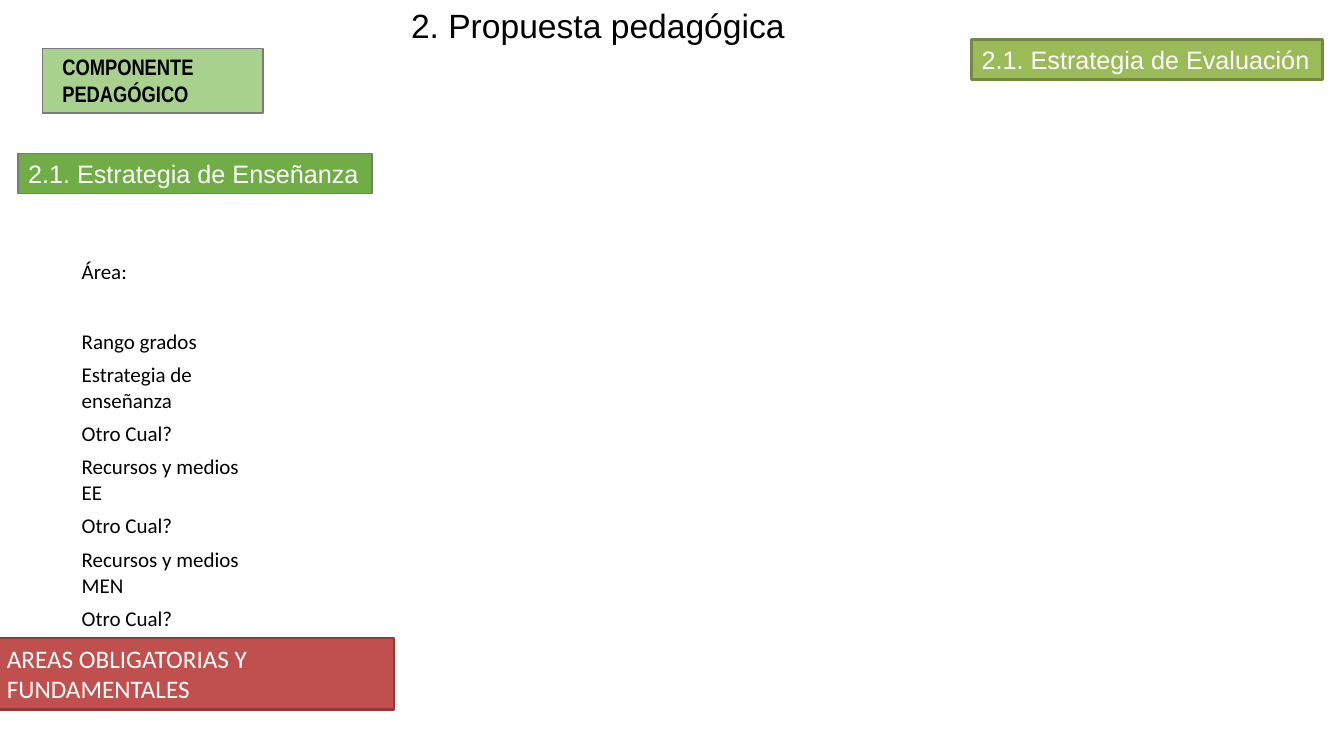
"""Build the pedagogical proposal slide."""
from pptx import Presentation
from pptx.dml.color import RGBColor
from pptx.enum.shapes import MSO_SHAPE
from pptx.enum.text import MSO_ANCHOR, MSO_AUTO_SIZE, PP_ALIGN
from pptx.util import Pt

RECT = MSO_SHAPE.RECTANGLE
TOP, MIDDLE = MSO_ANCHOR.TOP, MSO_ANCHOR.MIDDLE
GROW = MSO_AUTO_SIZE.SHAPE_TO_FIT_TEXT
LEFT = PP_ALIGN.LEFT

THEME = {
    "black": "000000", "white": "FFFFFF", "gray": "7A7A7A",
    "light_green": "A9D18E", "green": "70AD47",
    "olive": "9BBB59", "dark_olive": "738A42",
    "red": "C0504D", "dark_red": "8E3B39",
    "title": 24, "label": 18, "component": 16, "cell": 15,
    "sans": "Arial", "narrow": "Arial Narrow", "body": "Calibri",
}
HANGING = (40.5, -40.5)

TITLE = ("2. Propuesta pedagógica", (286.56, 0, 290.88, 36))
LABELS = [
    ("COMPONENTE PEDAGÓGICO", (30.24, 34.56, 157.68, 46.08), ("light_green", "gray", 1), True,
     {"size": "component", "font": "narrow", "color": "black", "bold": True,
      "indent": (7.2, 0), "before": 1.6}),
    ("2.1. Estrategia de Enseñanza", (12.96, 109.44, 252.72, 29), ("green", "gray", 1), False,
     {"font": "sans", "indent": HANGING}),
    ("2.1. Estrategia de Evaluación", (694.08, 28.08, 250.56, 29), ("olive", "dark_olive", 2), False,
     {"font": "sans", "indent": HANGING}),
]
AREAS = ("AREAS OBLIGATORIAS Y FUNDAMENTALES", (-2.16, 455.76, 283.68, 51.12),
         ("red", "dark_red", 2), True, {"font": "body"})

FIELDS = [
    ("Área:", 76), ("Rango grados", 24), ("Estrategia de enseñanza", 42),
    ("Otro Cual?", 24), ("Recursos y medios EE", 42), ("Otro Cual?", 24),
    ("Recursos y medios MEN", 42), ("Otro Cual?", 24),
]
FIELDS_LEFT, FIELDS_TOP, FIELDS_WIDTH = 51.84, 156.24, 136.08


def color(name):
    return RGBColor.from_string(THEME[name])


def put_text(tf, text, size="label", font="body", color_name=None, color_key="white",
             bold=False, indent=None, before=0):
    p = tf.paragraphs[0]
    p.alignment = LEFT
    if before:
        p.space_before = Pt(before)
    if indent:
        pPr = p._p.get_or_add_pPr()
        pPr.set("marL", str(Pt(indent[0])))
        pPr.set("indent", str(Pt(indent[1])))
    r = p.add_run()
    r.text = text
    r.font.size = Pt(THEME[size])
    r.font.name = THEME[font]
    r.font.bold = bold
    r.font.color.rgb = color(color_name or color_key)


def fit(tf, wrap):
    tf.word_wrap = wrap
    tf.auto_size = GROW
    tf.vertical_anchor = TOP


def add_label(s, text, box, paint, wrap, style):
    fill, line, width = paint
    sp = s.shapes.add_shape(RECT, *map(Pt, box))
    sp.shadow.inherit = False
    sp.fill.solid()
    sp.fill.fore_color.rgb = color(fill)
    sp.line.color.rgb = color(line)
    sp.line.width = Pt(width)
    fit(sp.text_frame, wrap)
    style = dict(style)
    put_text(sp.text_frame, text, color_name=style.pop("color", None), **style)


def add_title(s, text, box):
    tf = s.shapes.add_textbox(*map(Pt, box)).text_frame
    fit(tf, False)
    put_text(tf, text, size="title", font="sans", color_key="black", indent=HANGING)


def add_fields(s):
    height = sum(h for _, h in FIELDS)
    table = s.shapes.add_table(len(FIELDS), 1, Pt(FIELDS_LEFT), Pt(FIELDS_TOP),
                               Pt(FIELDS_WIDTH), Pt(height)).table
    table.first_row = table.horz_banding = False
    for i, (text, h) in enumerate(FIELDS):
        table.rows[i].height = Pt(h)
        cell = table.cell(i, 0)
        cell.fill.background()
        cell.vertical_anchor = MIDDLE
        cell.margin_left = cell.margin_right = Pt(6.5)
        cell.margin_top = cell.margin_bottom = Pt(2.8)
        put_text(cell.text_frame, text, size="cell", color_key="black")


def main():
    prs = Presentation()
    prs.slide_width, prs.slide_height = Pt(960), Pt(540)
    s = prs.slides.add_slide(prs.slide_layouts[6])
    add_title(s, *TITLE)
    for label in LABELS:
        add_label(s, *label)
    add_fields(s)
    add_label(s, *AREAS)
    prs.save("out.pptx")


if __name__ == "__main__":
    main()
